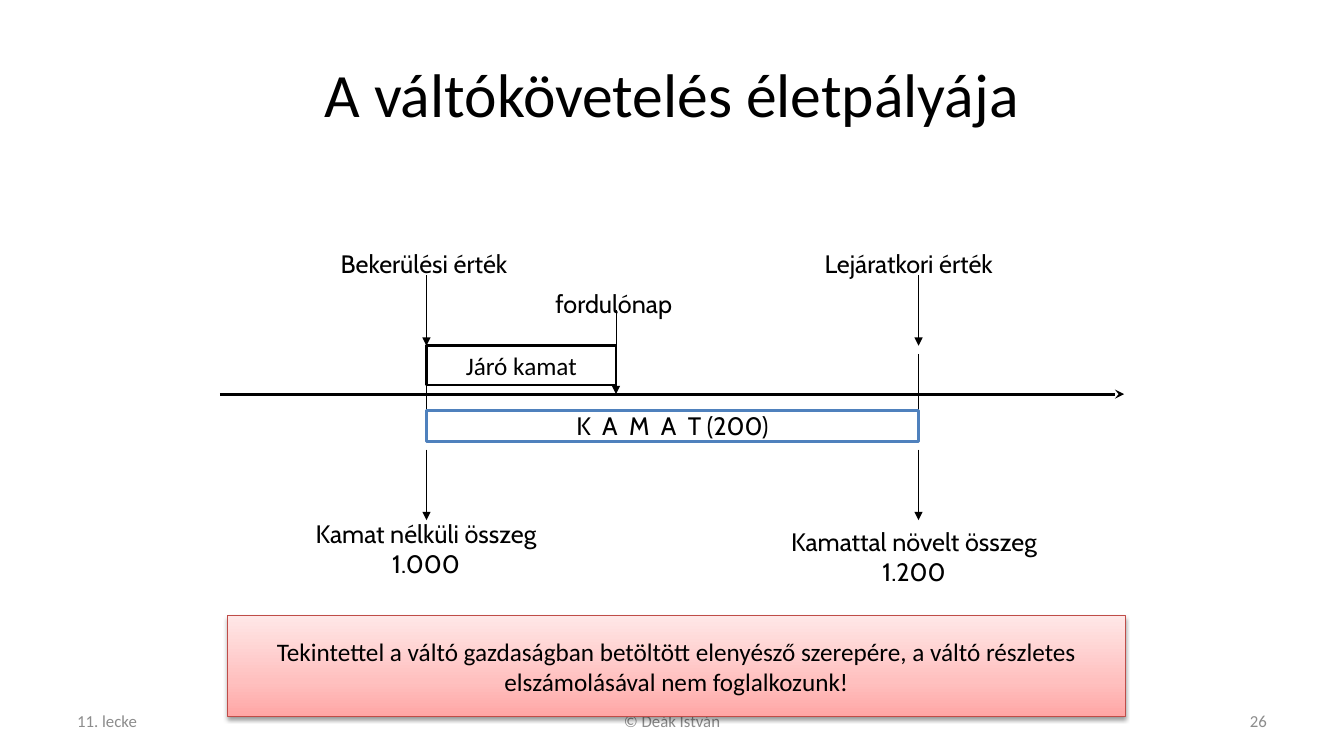
from lxml.etree import SubElement
from pptx import Presentation
from pptx.dml.color import RGBColor
from pptx.enum.shapes import MSO_CONNECTOR, MSO_SHAPE
from pptx.enum.text import MSO_ANCHOR, MSO_AUTO_SIZE, PP_ALIGN
from pptx.oxml.ns import qn
from pptx.util import Inches, Pt

WIDTH, HEIGHT = 13.33, 7.5
BLACK, WHITE, GREY = "000000", "FFFFFF", "8C8C8C"
BLUE, RED = "4F81BD", "BF4C48"
NOTICE_STOPS = [(0, "FFA6A5"), (35, "FFC0BF"), (100, "FFE7E7")]


def color(hex_value):
    return RGBColor.from_string(hex_value)


def write(shape, text, size=18, font="Calibri", ink=BLACK, align=PP_ALIGN.CENTER,
          anchor=MSO_ANCHOR.MIDDLE, wrap=True):
    frame = shape.text_frame
    frame.text = text
    frame.word_wrap = wrap
    frame.vertical_anchor = anchor
    for paragraph in frame.paragraphs:
        paragraph.alignment = align
        for run in paragraph.runs:
            run.font.size = Pt(size)
            run.font.name = font
            run.font.color.rgb = color(ink)


def add_text(slide, box, text, **style):
    shape = slide.shapes.add_textbox(*map(Inches, box))
    write(shape, text, **style)
    return shape


def add_label(slide, box, text, align=PP_ALIGN.LEFT):
    shape = add_text(slide, box, text, font="Cabin", align=align,
                     anchor=MSO_ANCHOR.TOP, wrap=False)
    shape.text_frame.auto_size = MSO_AUTO_SIZE.SHAPE_TO_FIT_TEXT


def add_line(slide, start, end, width=0.75, arrowhead=None):
    line = slide.shapes.add_connector(MSO_CONNECTOR.STRAIGHT, *map(Inches, start + end))
    line.line.color.rgb = color(BLACK)
    line.line.width = Pt(width)
    if arrowhead:
        SubElement(line.line._get_or_add_ln(), qn("a:tailEnd"), type=arrowhead)
    SubElement(line._element.spPr, qn("a:effectLst"))


def add_rectangle(slide, box, outline, width):
    shape = slide.shapes.add_shape(MSO_SHAPE.RECTANGLE, *map(Inches, box))
    shape.shadow.inherit = False
    shape.fill.solid()
    shape.fill.fore_color.rgb = color(WHITE)
    shape.line.color.rgb = color(outline)
    shape.line.width = Pt(width)
    return shape


def add_footer(slide, box):
    left, top, width, height = box
    side, middle = 3.11, 4.22
    parts = [
        ("11. lecke", left, side, PP_ALIGN.LEFT),
        ("© Deák István", left + (width - middle) / 2, middle, PP_ALIGN.CENTER),
        ("26", left + width - side, side, PP_ALIGN.RIGHT),
    ]
    for text, x, part_width, align in parts:
        add_text(slide, (x, top, part_width, height), text, size=12, ink=GREY, align=align)


def add_timeline(slide, box):
    """Time axis with acquisition, balance sheet date and maturity."""
    left, top, width, _ = box
    acquired, balance_day, due = left + 2.05, left + 3.93, left + 6.93
    axis = top + 1.5
    arrow_length = 0.7
    upper, lower = top + 0.32, top + 2.05
    accrued_top = upper + arrow_length

    add_line(slide, (left, axis), (left + width, axis), 2.25, "stealth")
    for moment in (acquired, due):
        add_line(slide, (moment, axis - 0.4), (moment, axis + 0.31))
        for start in (upper, lower):
            add_line(slide, (moment, start), (moment, start + arrow_length),
                     arrowhead="triangle")
    add_line(slide, (balance_day, top + 0.67), (balance_day, axis), arrowhead="triangle")

    add_label(slide, (left + 1.1, top, 1.97, 0.4), "Bekerülési érték")
    add_label(slide, (left + 5.9, top, 2.02, 0.4), "Lejáratkori érték")
    add_label(slide, (left + 3.23, top + 0.4, 1.4, 0.4), "fordulónap")
    add_label(slide, (left + 0.79, top + 2.68, 2.51, 0.7),
              "Kamat nélküli összeg\n1.000", PP_ALIGN.CENTER)
    add_label(slide, (left + 5.51, top + 2.76, 2.75, 0.7),
              "Kamattal növelt összeg\n1.200", PP_ALIGN.CENTER)

    interest = add_rectangle(slide, (acquired, axis + 0.16, due - acquired, 0.31), BLUE, 2)
    write(interest, "K  A  M  A  T (200)", font="Cabin", wrap=False)
    accrued = add_rectangle(
        slide, (acquired, accrued_top, balance_day - acquired, 0.39), BLACK, 2)
    write(accrued, "Járó kamat", wrap=False)


def add_notice(slide, box):
    shape = add_rectangle(slide, box, RED, 0.75)
    write(shape, "Tekintettel a váltó gazdaságban betöltött elenyésző szerepére, "
                 "a váltó részletes elszámolásával nem foglalkozunk!")
    shape.fill.gradient()
    shape.fill.gradient_angle = 90
    properties = shape._element.spPr
    stops = properties.find(qn("a:gradFill")).find(qn("a:gsLst"))
    for stop in list(stops):
        stops.remove(stop)
    for position, hex_value in NOTICE_STOPS:
        stop = SubElement(stops, qn("a:gs"), pos=str(position * 1000))
        SubElement(stop, qn("a:srgbClr"), val=hex_value)
    shadow = SubElement(properties.find(qn("a:effectLst")), qn("a:outerShdw"),
                        blurRad=str(Pt(3.1)), dist=str(Pt(1.6)), dir="5400000",
                        rotWithShape="0")
    shade = SubElement(shadow, qn("a:srgbClr"), val=BLACK)
    SubElement(shade, qn("a:alpha"), val="38000")


def main():
    presentation = Presentation()
    presentation.slide_width = Inches(WIDTH)
    presentation.slide_height = Inches(HEIGHT)
    slide = presentation.slides.add_slide(presentation.slide_layouts[6])
    margin = WIDTH * 0.05
    content_width = WIDTH - 2 * margin
    add_text(slide, (margin, 0.3, content_width, 1.25),
             "A váltókövetelés életpályája", size=44)
    add_footer(slide, (margin, 6.95, content_width, 0.4))
    add_timeline(slide, (2.18, 2.41, 8.97, 3.46))
    add_notice(slide, (2.26, 6.11, 8.9, 1))
    presentation.save("out.pptx")


if __name__ == "__main__":
    main()
